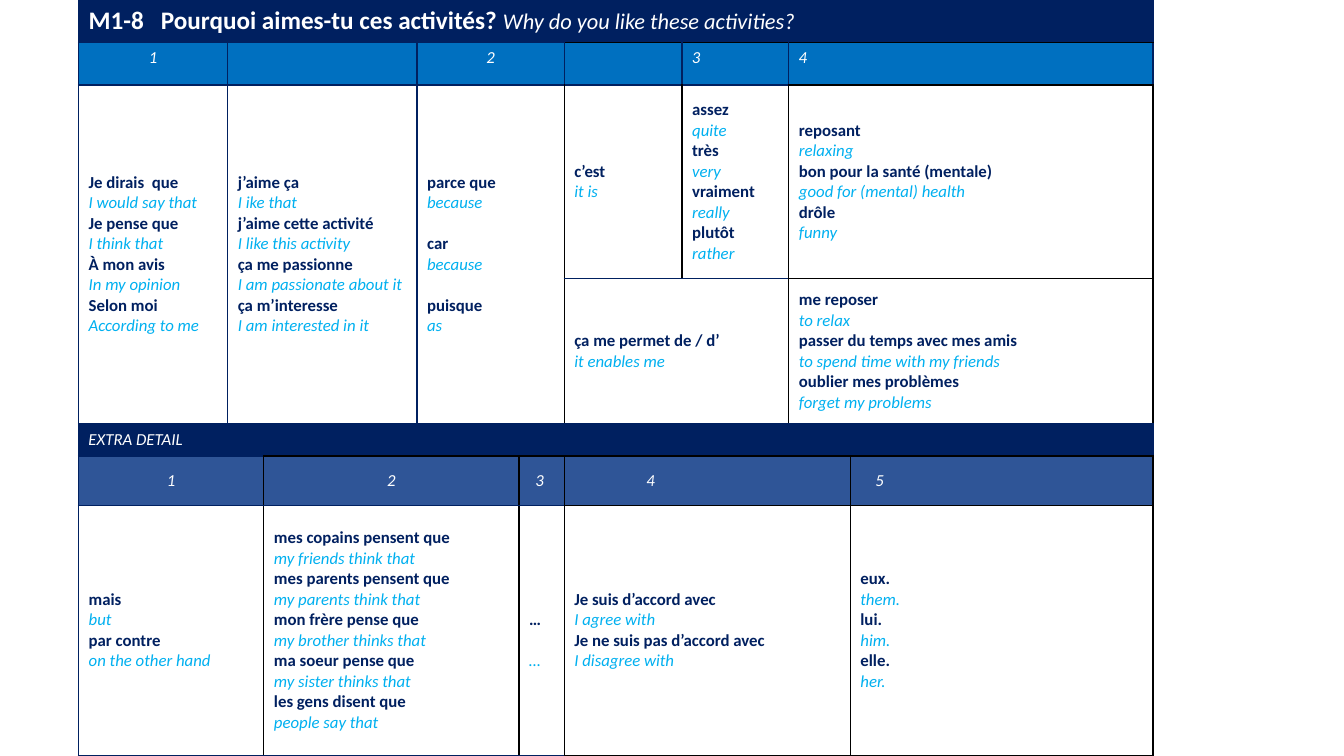
"""Build a French sentence-builder slide about why you like activities."""
from dataclasses import dataclass
from itertools import product

from lxml.etree import SubElement
from pptx import Presentation
from pptx.dml.color import RGBColor
from pptx.enum.text import MSO_ANCHOR, PP_ALIGN
from pptx.oxml.ns import qn
from pptx.table import Table, _Cell
from pptx.util import Cm, Pt

COLOURS = {
    "navy": "002060",
    "azure": "0070C0",
    "slate": "2F5597",
    "sky": "00B0F0",
    "white": "FFFFFF",
    "black": "000000",
}
FONT = "Calibri"
COLUMN_WIDTHS = (3.76, 0.91, 3.86, 2.57, 1.14, 2.97, 2.69, 1.55, 7.63)
ROW_HEIGHTS = (1.07, 1.07, 4.88, 3.66, 0.81, 1.24, 6.3)
LINE_GAP = Cm(0.52)
CELL_MARGIN = Cm(0.13)
LEFT, CENTRE = PP_ALIGN.LEFT, PP_ALIGN.CENTER


@dataclass(frozen=True)
class Heading:
    """A coloured bar cell with one short label."""

    row: int
    column: int
    fill: str
    label: str = ""
    columns: int = 1
    black_sides: str = ""
    alignment: PP_ALIGN = LEFT
    indent: float = 0
    anchor: MSO_ANCHOR = MSO_ANCHOR.MIDDLE


@dataclass(frozen=True)
class PhraseBank:
    """A cell of French lines, each followed by its English meaning."""

    row: int
    column: int
    lines: tuple[str, ...]
    rows: int = 1
    columns: int = 1
    black_sides: str = ""
    spaced_lines: tuple[int, ...] = ()


TOP = MSO_ANCHOR.TOP
HEADINGS = (
    Heading(1, 0, "azure", "1", alignment=CENTRE, anchor=TOP),
    Heading(1, 1, "azure", columns=2, anchor=TOP),
    Heading(1, 3, "azure", "2", columns=2, alignment=CENTRE, anchor=TOP),
    Heading(1, 5, "azure", black_sides="T", anchor=TOP),
    Heading(1, 6, "azure", "3", black_sides="T", anchor=TOP),
    Heading(1, 7, "azure", "4", columns=2, black_sides="TB", anchor=TOP),
    Heading(4, 0, "navy", "EXTRA DETAIL", columns=9),
    Heading(5, 0, "slate", "1", columns=2, black_sides="R", alignment=CENTRE),
    Heading(5, 2, "slate", "2", columns=2, black_sides="LTR", alignment=CENTRE),
    Heading(5, 4, "slate", "3", black_sides="LTR", indent=0.16),
    Heading(5, 5, "slate", "4", columns=3, black_sides="LTRB", indent=1.82),
    Heading(5, 8, "slate", "5", black_sides="LTRB", indent=0.38),
)
PHRASE_BANKS = (
    PhraseBank(2, 0, (
        "Je dirais  que", "I would say that", "Je pense que", "I think that",
        "À mon avis", "In my opinion", "Selon moi", "According to me"), rows=2),
    PhraseBank(2, 1, (
        "j’aime ça", "I ike that", "j’aime cette activité", "I like this activity",
        "ça me passionne", "I am passionate about it",
        "ça m’interesse", "I am interested in it"), rows=2, columns=2),
    PhraseBank(2, 3, (
        "parce que", "because", "car", "because", "puisque", "as"),
        rows=2, columns=2, black_sides="R", spaced_lines=(2, 4)),
    PhraseBank(2, 5, ("c’est", "it is"), black_sides="LR"),
    PhraseBank(2, 6, (
        "assez", "quite", "très", "very", "vraiment", "really",
        "plutôt", "rather"), black_sides="LR"),
    PhraseBank(2, 7, (
        "reposant", "relaxing", "bon pour la santé (mentale)",
        "good for (mental) health", "drôle", "funny"),
        columns=2, black_sides="LTRB"),
    PhraseBank(3, 5, ("ça me permet de / d’", "it enables me"),
               columns=2, black_sides="LR"),
    PhraseBank(3, 7, (
        "me reposer", "to relax", "passer du temps avec mes amis",
        "to spend time with my friends", "oublier mes problèmes",
        "forget my problems"), columns=2, black_sides="LTRB"),
    PhraseBank(6, 0, ("mais", "but", "par contre", "on the other hand"),
               columns=2, black_sides="R"),
    PhraseBank(6, 2, (
        "mes copains pensent que", "my friends think that",
        "mes parents pensent que", "my parents think that",
        "mon frère pense que", "my brother thinks that",
        "ma soeur pense que", "my sister thinks that",
        "les gens disent que", "people say that"),
        columns=2, black_sides="LR"),
    PhraseBank(6, 4, ("…", "…"), black_sides="LR", spaced_lines=(0, 1)),
    PhraseBank(6, 5, (
        "Je suis d’accord avec", "I agree with",
        "Je ne suis pas d’accord avec", "I disagree with"),
        columns=3, black_sides="LTRB"),
    PhraseBank(6, 8, ("eux.", "them.", "lui.", "him.", "elle.", "her."),
               black_sides="LTRB"),
)


def rgb(colour: str) -> RGBColor:
    """Return the named colour."""
    return RGBColor.from_string(COLOURS[colour])


def set_font(font, size: float, colour: str, bold: bool, italic: bool) -> None:
    """Format the font of a paragraph or run."""
    font.name, font.size = FONT, Pt(size)
    font.bold, font.italic = bold, italic
    font.color.rgb = rgb(colour)


def set_borders(cell: _Cell, black_sides: str) -> None:
    """Draw four one-point borders, black on the given sides and navy elsewhere."""
    properties = cell._tc.get_or_add_tcPr()
    for side in "LRTB":
        border = SubElement(properties, qn(f"a:ln{side}"), w=str(Pt(1)))
        paint = SubElement(border, qn("a:solidFill"))
        colour = COLOURS["black" if side in black_sides else "navy"]
        SubElement(paint, qn("a:srgbClr"), val=colour)


def open_block(grid: Table, row: int, column: int, rows: int, columns: int,
               fill: str | None, black_sides: str) -> _Cell:
    """Merge, border and fill a block of cells and return its first cell."""
    first = grid.cell(row, column)
    if rows * columns > 1:
        first.merge(grid.cell(row + rows - 1, column + columns - 1))
    for y, x in product(range(row, row + rows), range(column, column + columns)):
        cell = grid.cell(y, x)
        set_borders(cell, black_sides)
        if fill:
            cell.fill.solid()
            cell.fill.fore_color.rgb = rgb(fill)
        else:
            cell.fill.background()
        set_font(cell.text_frame.paragraphs[0].font, 12, "white", False, True)
    first.margin_top = first.margin_bottom = CELL_MARGIN
    first.vertical_anchor = MSO_ANCHOR.MIDDLE
    return first


def add_title(grid: Table) -> None:
    """Write the bilingual title across the top row."""
    cell = open_block(grid, 0, 0, 1, len(COLUMN_WIDTHS), "navy", "")
    cell.vertical_anchor = TOP
    paragraph = cell.text_frame.paragraphs[0]
    tab_stops = SubElement(paragraph._p.get_or_add_pPr(), qn("a:tabLst"))
    paragraph._p.pPr.insert(0, tab_stops)
    SubElement(tab_stops, qn("a:tab"), pos=str(Cm(1.82)), algn="l")
    question = paragraph.add_run()
    question.text = "M1-8\tPourquoi aimes-tu ces activités? "
    set_font(question.font, 18, "white", True, False)
    translation = paragraph.add_run()
    translation.text = "Why do you like these activities?"
    set_font(translation.font, 16, "white", False, True)


def add_heading(grid: Table, heading: Heading) -> None:
    """Write one coloured heading cell."""
    cell = open_block(grid, heading.row, heading.column, 1, heading.columns,
                      heading.fill, heading.black_sides)
    cell.vertical_anchor = heading.anchor
    cell.margin_left = Cm(0.25 + heading.indent)
    paragraph = cell.text_frame.paragraphs[0]
    paragraph.text = heading.label
    paragraph.alignment = heading.alignment


def add_phrase_bank(grid: Table, bank: PhraseBank) -> None:
    """Write alternating French and English lines."""
    cell = open_block(grid, bank.row, bank.column, bank.rows, bank.columns,
                      None, bank.black_sides)
    cell.text_frame.text = "\n".join(bank.lines)
    for index, paragraph in enumerate(cell.text_frame.paragraphs):
        french = index % 2 == 0
        set_font(paragraph.font, 12, "navy" if french else "sky", french, not french)
        if index in bank.spaced_lines:
            if index:
                paragraph.space_before = LINE_GAP
            else:
                cell.margin_top = CELL_MARGIN + LINE_GAP


def main() -> None:
    """Build and save the slide."""
    deck = Presentation()
    deck.slide_width, deck.slide_height = Cm(33.87), Cm(19.05)
    slide = deck.slides.add_slide(deck.slide_layouts[6])
    grid = slide.shapes.add_table(
        len(ROW_HEIGHTS), len(COLUMN_WIDTHS), Cm(1.98), Cm(0),
        Cm(sum(COLUMN_WIDTHS)), Cm(sum(ROW_HEIGHTS))).table
    grid.first_row = grid.horz_banding = False
    for column, width in zip(grid.columns, COLUMN_WIDTHS):
        column.width = Cm(width)
    for row, height in zip(grid.rows, ROW_HEIGHTS):
        row.height = Cm(height)
    add_title(grid)
    for heading in HEADINGS:
        add_heading(grid, heading)
    for bank in PHRASE_BANKS:
        add_phrase_bank(grid, bank)
    deck.save("out.pptx")


if __name__ == "__main__":
    main()
